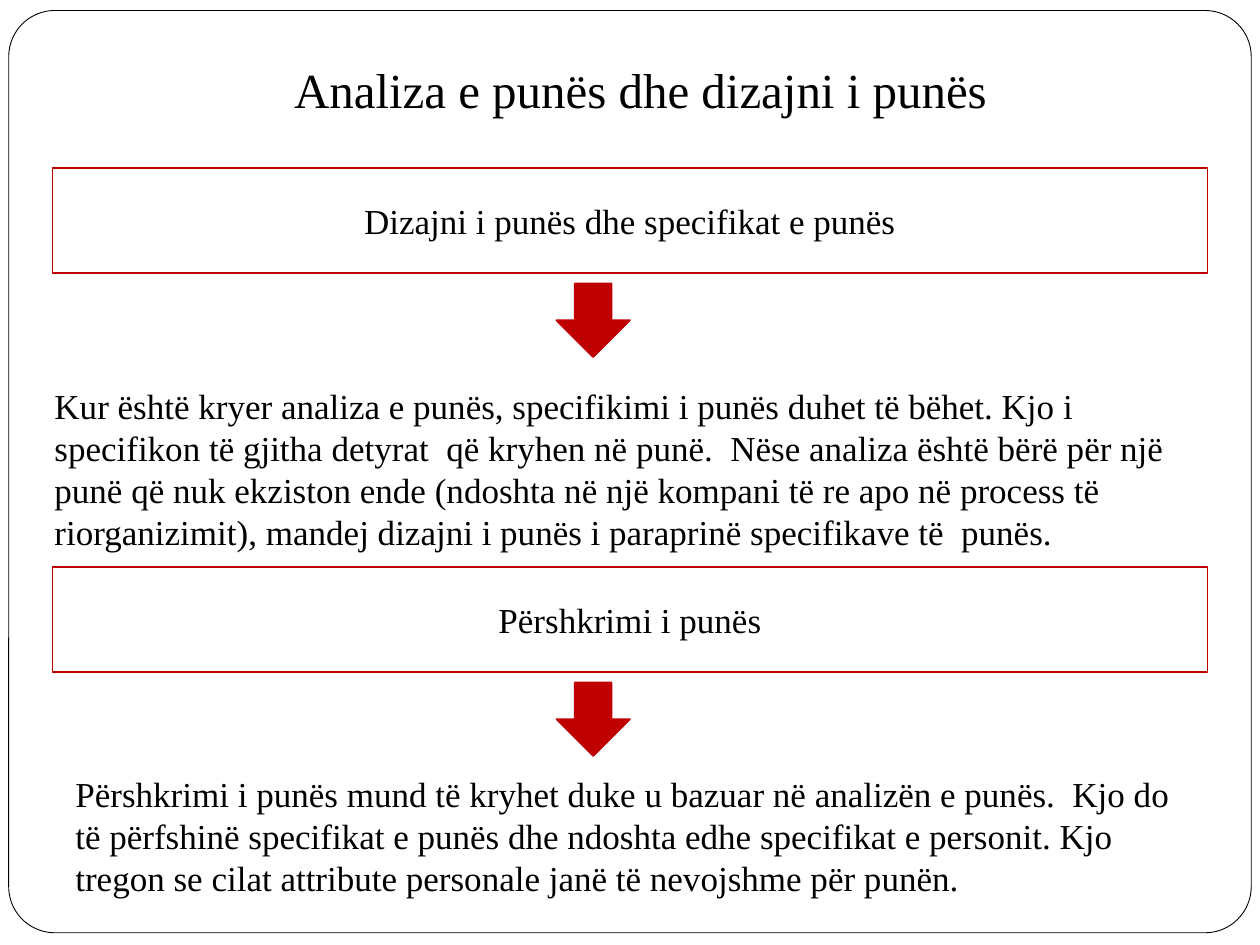
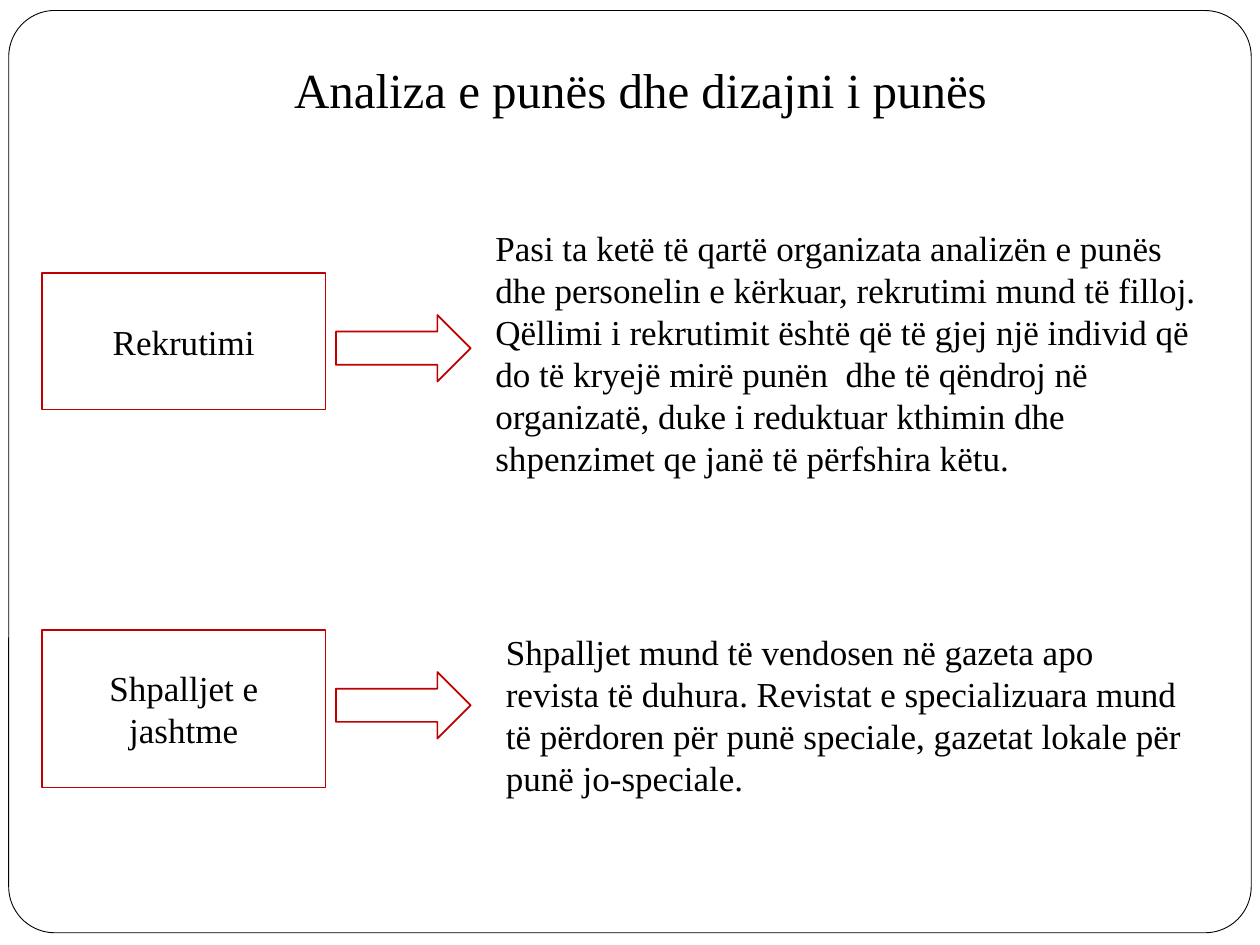
from pptx import Presentation
from pptx.dml.color import RGBColor
from pptx.enum.shapes import MSO_SHAPE
from pptx.enum.text import MSO_ANCHOR, PP_ALIGN
from pptx.util import Pt

BLACK = RGBColor(0x00, 0x00, 0x00)
WHITE = RGBColor(0xFF, 0xFF, 0xFF)
RED = RGBColor(0xC0, 0x00, 0x00)
FONT = "Times New Roman"
RECT, FRAME = MSO_SHAPE.RECTANGLE, MSO_SHAPE.ROUNDED_RECTANGLE
DOWN, RIGHT = MSO_SHAPE.DOWN_ARROW, MSO_SHAPE.RIGHT_ARROW
TOP, MIDDLE = MSO_ANCHOR.TOP, MSO_ANCHOR.MIDDLE
LEFT, CENTER = PP_ALIGN.LEFT, PP_ALIGN.CENTER

TITLE = "Analiza e punës dhe dizajni i punës"
STEPS = [
    (96, "Dizajni i punës dhe specifikat e punës", (24, 216, 666, 104),
     "Kur është kryer analiza e punës, specifikimi i punës duhet të bëhet. "
     "Kjo i specifikon të gjitha detyrat  që kryhen në punë.  Nëse analiza "
     "është bërë për një punë që nuk ekziston ende (ndoshta në një kompani "
     "të re apo në process të riorganizimit), mandej dizajni i punës i "
     "paraprinë specifikave të  punës."),
    (324, "Përshkrimi i punës", (36, 438, 654, 80),
     "Përshkrimi i punës mund të kryhet duke u bazuar në analizën e punës.  "
     "Kjo do të përfshinë specifikat e punës dhe ndoshta edhe specifikat e "
     "personit. Kjo tregon se cilat attribute personale janë të nevojshme "
     "për punën."),
]
HIRES = [
    (156, 78, "Rekrutimi", (276, 126, 426, 153), TOP,
     "Pasi ta ketë të qartë organizata analizën e punës dhe personelin e "
     "kërkuar, rekrutimi mund të filloj. Qëllimi i rekrutimit është që të "
     "gjej një individ që  do të kryejë mirë punën  dhe të qëndroj në "
     "organizatë, duke i reduktuar kthimin dhe shpenzimet qe janë të "
     "përfshira këtu."),
    (360, 90, "Shpalljet e jashtme", (282, 356, 402, 104), MIDDLE,
     "Shpalljet mund të vendosen në gazeta apo revista të duhura. Revistat "
     "e specializuara mund të përdoren për punë speciale, gazetat lokale "
     "për punë jo-speciale."),
]


class Deck:
    """Holds the shared style and the current slide."""

    def __init__(self):
        self.prs = Presentation()
        self.prs.slide_width, self.prs.slide_height = Pt(720), Pt(540)
        self.slide = None

    def page(self, title):
        self.slide = self.prs.slides.add_slide(self.prs.slide_layouts[6])
        frame = self.shape(FRAME, (5, 6, 710, 527), WHITE, BLACK, 0.5)
        frame.adjustments[0] = 0.05
        self.text((48, 24, 636, 54), title, MIDDLE, CENTER, 28)

    def shape(self, kind, area, fill=None, line=RED, width=1):
        shape = self.slide.shapes.add_shape(kind, *map(Pt, area))
        shape.shadow.inherit = False
        if fill is None:
            shape.fill.background()
        else:
            shape.fill.solid()
            shape.fill.fore_color.rgb = fill
        shape.line.color.rgb = line
        shape.line.width = Pt(width)
        return shape

    def label(self, shape, text, anchor, align, size):
        frame = shape.text_frame
        frame.word_wrap = True
        frame.vertical_anchor = anchor
        frame.text = text
        for para in frame.paragraphs:
            para.alignment = align
            for run in para.runs:
                run.font.name = FONT
                run.font.size = Pt(size)
                run.font.color.rgb = BLACK

    def text(self, area, text, anchor=TOP, align=LEFT, size=20):
        box = self.slide.shapes.add_textbox(*map(Pt, area))
        self.label(box, text, anchor, align, size)

    def box(self, area, text):
        self.label(self.shape(RECT, area), text, MIDDLE, CENTER, 20)


def main():
    deck = Deck()
    deck.page(TITLE)
    for top, name, area, body in STEPS:
        deck.box((30, top, 660, 60), name)
        deck.shape(DOWN, (318, top + 66, 42, 42), RED)
        deck.text(area, body)

    deck.page(TITLE)
    for top, height, name, area, anchor, body in HIRES:
        deck.box((24, top, 162, height), name)
        deck.shape(RIGHT, (192, top + 24, 77, 38))
        deck.text(area, body, anchor)
    deck.prs.save("out.pptx")


if __name__ == "__main__":
    main()
